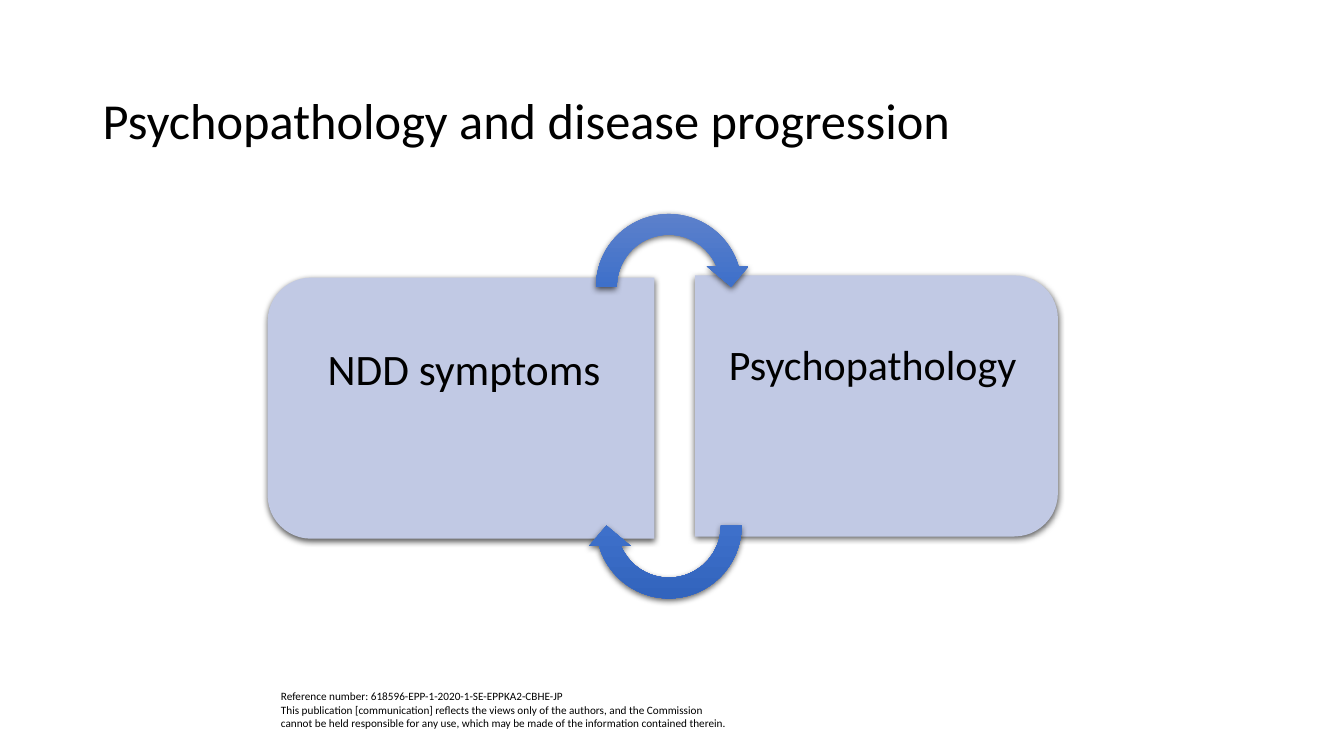
from copy import deepcopy

from lxml import etree
from pptx import Presentation
from pptx import util as u
from pptx.dml.color import RGBColor
from pptx.enum import shapes, text
from pptx.oxml.ns import qn

BLACK = RGBColor(0x00, 0x00, 0x00)
CARD = RGBColor(0xC1, 0xC9, 0xE4)
BLUES = [RGBColor(0x61, 0x83, 0xCB), RGBColor(0x3E, 0x70, 0xCA),
         RGBColor(0x30, 0x62, 0xBB)]
FONT = "Calibri"
KIND = shapes.MSO_SHAPE
INSET = (0.25, 0.13, 0.25, 0.13)


class Page:
    def __init__(self, slide):
        self.items = slide.shapes

    def label(self, box, lines, size, inset=INSET, align=text.PP_ALIGN.LEFT,
              anchor=text.MSO_ANCHOR.TOP, lead=None):
        """Add a text box; the lines are parted by line breaks."""
        frame = self.items.add_textbox(*map(u.Cm, box)).text_frame
        frame.word_wrap = True
        frame.vertical_anchor = anchor
        (frame.margin_left, frame.margin_top,
         frame.margin_right, frame.margin_bottom) = map(u.Cm, inset)
        para = frame.paragraphs[0]
        para.alignment = align
        para.line_spacing = lead
        for i, line in enumerate(lines):
            if i:
                para.add_line_break()
            run = para.add_run()
            run.text = line
            run.font.name = FONT
            run.font.size = u.Pt(size)
            run.font.color.rgb = BLACK

    def solid(self, kind, box, turn, adjust):
        """Add an outline-free shape with a soft shadow below it."""
        shape = self.items.add_shape(kind, *map(u.Cm, box))
        shape.rotation = turn
        for i, value in enumerate(adjust):
            shape.adjustments[i] = value
        shape.line.fill.background()
        shape.shadow.inherit = False
        glow = etree.SubElement(
            shape._element.spPr.find(qn("a:effectLst")), qn("a:outerShdw"),
            blurRad=str(u.Pt(4.5)), dist=str(u.Pt(1.5)), dir="5400000",
            algn="ctr", rotWithShape="0")
        tint = etree.SubElement(glow, qn("a:srgbClr"), val="000000")
        etree.SubElement(tint, qn("a:alpha"), val="63000")
        return shape

    def card(self, box, turn):
        shape = self.solid(KIND.ROUND_2_SAME_RECTANGLE, box, turn, (0.167, 0))
        shape.fill.solid()
        shape.fill.fore_color.rgb = CARD

    def arrow(self, box, turn):
        shape = self.solid(KIND.CIRCULAR_ARROW, box, turn,
                           (0.125, 11.423, 204.577, 108, 0.125))
        fill = shape.fill
        fill.gradient()
        fill.gradient_angle = 270
        grad = shape._element.spPr.find(qn("a:gradFill"))
        grad.set("rotWithShape", "0")
        stops = grad.find(qn("a:gsLst"))
        stops.append(deepcopy(stops[-1]))
        for i, (stop, blue) in enumerate(zip(fill.gradient_stops, BLUES)):
            stop.position = i / 2
            stop.color.rgb = blue


def main():
    deck = Presentation()
    deck.slide_width, deck.slide_height = u.Cm(33.87), u.Cm(19.05)
    page = Page(deck.slides.add_slide(deck.slide_layouts[6]))
    mid = text.PP_ALIGN.CENTER

    page.label((6.83, 17.25, 11.79, 1.27), [
        "Reference number: 618596-EPP-1-2020-1-SE-EPPKA2-CBHE-JP",
        "This publication [communication] reflects the views only of the "
        "authors, and the Commission cannot be held responsible for any use, "
        "which may be made of the information contained therein."], 8)
    page.label((2.34, 1.88, 29.21, 2.44),
               ["Psychopathology and disease progression"], 36,
               anchor=text.MSO_ANCHOR.MIDDLE, lead=0.9)

    page.card((8.33, 5.41, 6.58, 9.75), 270)
    page.label((7.06, 7.32, 9.42, 5.92), ["NDD symptoms"], 31,
               (0.33, 2.26, 0.48, 0.56), mid, lead=0.9)
    page.card((18.8, 5.66, 6.58, 9.14), 90)
    page.label((17.5, 7.26, 8.81, 5.92), ["Psychopathology"], 30,
               (0.48, 2.21, 0.3, 0.53), mid, lead=0.9)

    for top, turn in ((5.13, 0), (11.15, 180)):
        page.arrow((14.76, top, 4.19, 4.19), turn)

    deck.save("out.pptx")


if __name__ == "__main__":
    main()
